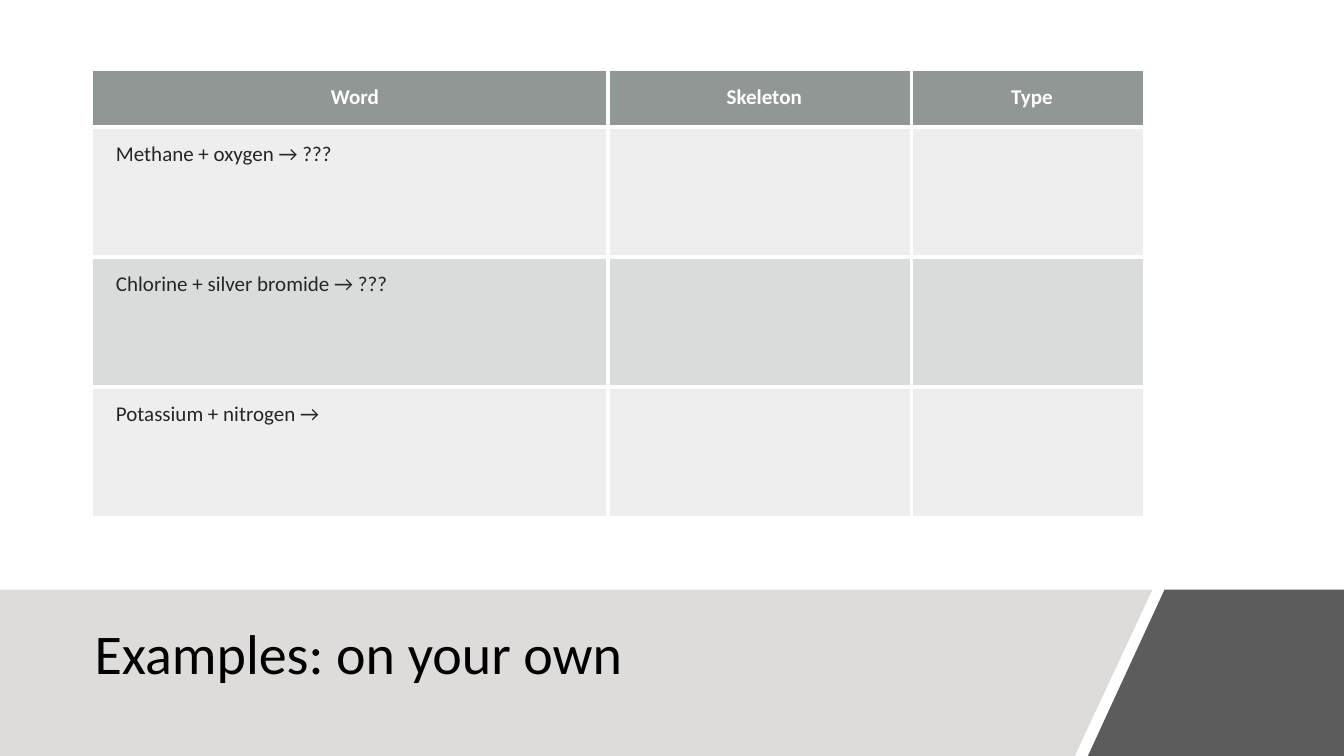
from lxml.etree import SubElement
from pptx import Presentation
from pptx.dml.color import RGBColor
from pptx.enum.text import MSO_ANCHOR, PP_ALIGN
from pptx.oxml.ns import qn
from pptx.util import Inches, Pt

TITLE = "Examples: on your own"
ROWS = [
    ("Word", "Skeleton", "Type"),
    ("Methane + oxygen → ???", "", ""),
    ("Chlorine + silver bromide → ???", "", ""),
    ("Potassium + nitrogen →", "", ""),
]
COL_WIDTHS = [5.11, 3.01, 2.3]
ROW_HEIGHTS = [0.56, 1.29, 1.29, 1.29]
TABLE_LEFT, TABLE_TOP = 0.92, 0.7
ROW_FILLS = [("header", 70), ("body", 15), ("body", 30), ("body", 15)]
BANDS = [
    ([(0, 5.85), (11.43, 5.85), (10.66, 7.5), (0, 7.5)], "band", 100),
    ([(11.55, 5.85), (13.33, 5.85), (13.33, 7.5), (10.79, 7.5)], "corner", 85),
]
COLORS = {
    "band": "DDDCDB",
    "corner": "404040",
    "header": "636B68",
    "body": "878E8B",
    "white": "FFFFFF",
    "text": "262626",
    "title": "000000",
}
FONT = "Calibri"


def rgb(name):
    return RGBColor.from_string(COLORS[name])


def set_fill(fill, parent, name, alpha):
    fill.solid()
    fill.fore_color.rgb = rgb(name)
    if alpha < 100:
        clr = parent.find(qn("a:solidFill")).find(qn("a:srgbClr"))
        SubElement(clr, qn("a:alpha"), val=str(alpha * 1000))


def set_font(p, size, color, bold=False):
    p.font.name = FONT
    p.font.size = Pt(size)
    p.font.bold = bold
    p.font.color.rgb = rgb(color)


def add_border(tc_pr, side):
    ln = SubElement(tc_pr, qn(f"a:ln{side}"), w=str(Pt(3)))
    fill = SubElement(ln, qn("a:solidFill"))
    SubElement(fill, qn("a:srgbClr"), val=COLORS["white"])


def add_band(s, points, color, alpha):
    corners = [(Inches(x), Inches(y)) for x, y in points]
    builder = s.shapes.build_freeform(*corners[0])
    builder.add_line_segments(corners[1:], close=True)
    sp = builder.convert_to_shape()
    sp.shadow.inherit = False
    sp.line.fill.background()
    set_fill(sp.fill, sp.element.spPr, color, alpha)


def add_title(s):
    sp = s.shapes.add_textbox(Inches(0.84), Inches(5.95), Inches(9.95), Inches(0.91))
    tf = sp.text_frame
    tf.word_wrap = True
    tf.vertical_anchor = MSO_ANCHOR.BOTTOM
    p = tf.paragraphs[0]
    p.text = TITLE
    p.line_spacing = 0.9
    set_font(p, 40, "title")


def add_reactions(s):
    n_rows, n_cols = len(ROWS), len(COL_WIDTHS)
    table = s.shapes.add_table(
        n_rows, n_cols, Inches(TABLE_LEFT), Inches(TABLE_TOP),
        Inches(sum(COL_WIDTHS)), Inches(sum(ROW_HEIGHTS)),
    ).table
    for col, width in zip(table.columns, COL_WIDTHS):
        col.width = Inches(width)
    for i, (texts, height, row_fill) in enumerate(zip(ROWS, ROW_HEIGHTS, ROW_FILLS)):
        table.rows[i].height = Inches(height)
        header = i == 0
        for j, text in enumerate(texts):
            cell = table.cell(i, j)
            cell.margin_left = Inches(0.23)
            cell.margin_right = cell.margin_top = cell.margin_bottom = Inches(0.14)
            p = cell.text_frame.paragraphs[0]
            p.text = text
            p.alignment = PP_ALIGN.CENTER if header else PP_ALIGN.LEFT
            set_font(p, 15, "white" if header else "text", header)
            tc_pr = cell._tc.get_or_add_tcPr()
            inner = {"L": j > 0, "R": j < n_cols - 1, "T": i > 0, "B": i < n_rows - 1}
            for side, shown in inner.items():
                if shown:
                    add_border(tc_pr, side)
            set_fill(cell.fill, tc_pr, *row_fill)


def main():
    prs = Presentation()
    prs.slide_width, prs.slide_height = Inches(13.33), Inches(7.5)
    s = prs.slides.add_slide(prs.slide_layouts[6])
    for band in BANDS:
        add_band(s, *band)
    add_title(s)
    add_reactions(s)
    prs.save("out.pptx")


if __name__ == "__main__":
    main()
